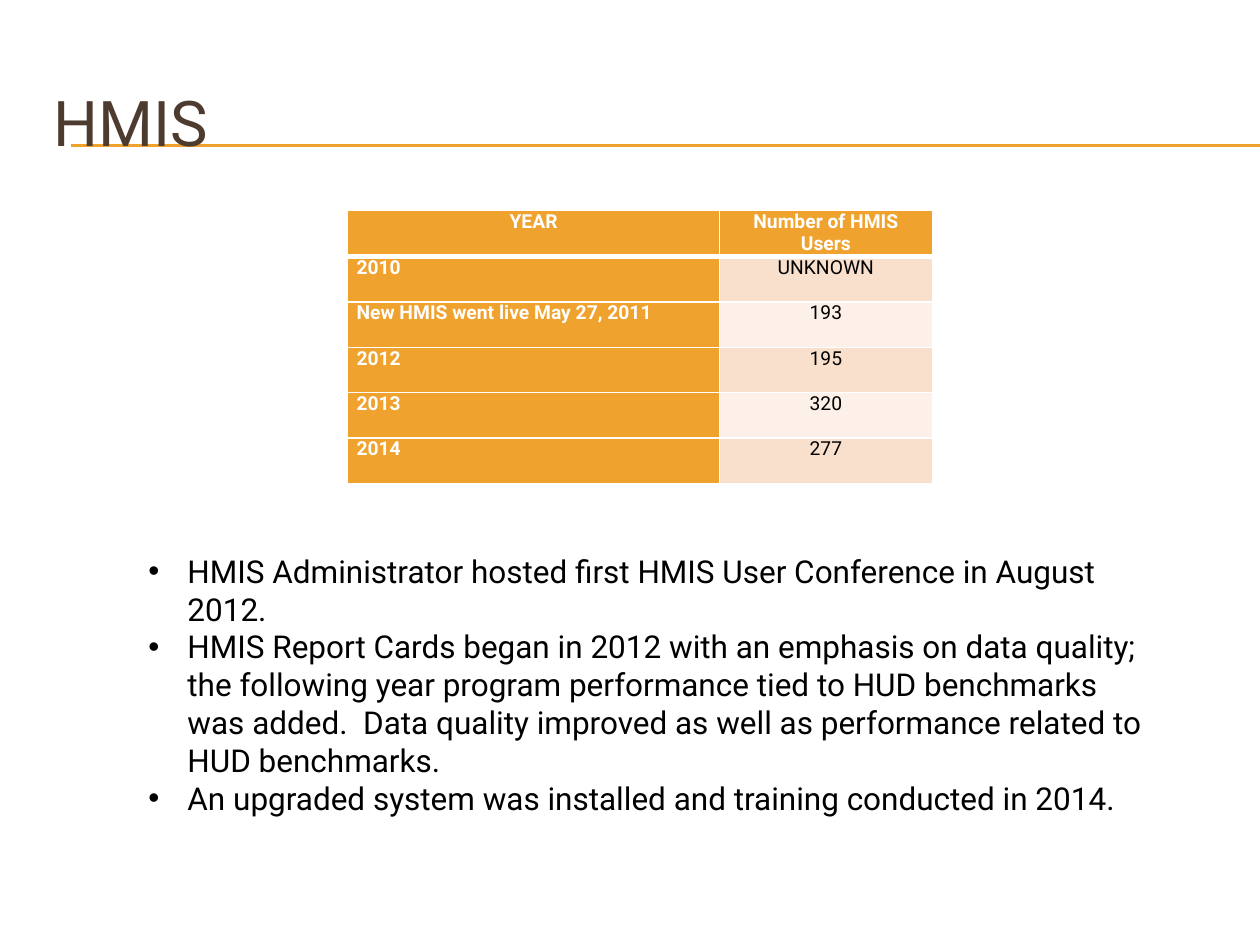
from lxml import etree
from pptx import Presentation
from pptx import util as u
from pptx.dml.color import RGBColor
from pptx.enum import shapes, text
from pptx.oxml.ns import qn

COLORS = {"brown": "4E3B30", "orange": "F0A22E", "peach": "F9E0CD",
          "cream": "FCF0E8", "white": "FFFFFF", "black": "000000"}
FONT = "Roboto"
COLS, ROWS = 10, 7.5  # grid of the slide, one inch to a cell

HEADER = ["YEAR", "Number of HMIS Users"]
USERS = [("2010", "UNKNOWN"), ("New HMIS went live May 27, 2011", "193"),
         ("2012", "195"), ("2013", "320"), ("2014", "277")]
NOTES = [
    "HMIS Administrator hosted first HMIS User Conference in August 2012.",
    "HMIS Report Cards began in 2012 with an emphasis on data quality; "
    "the following year program performance tied to HUD benchmarks was added.  "
    "Data quality improved as well as performance related to HUD benchmarks.",
    "An upgraded system was installed and training conducted in 2014.",
]


def rgb(name):
    return RGBColor.from_string(COLORS[name])


def write(p, content, size=18, color="black", bold=False, align=None):
    r = p.add_run()
    r.text = content
    r.font.name, r.font.size, r.font.bold = FONT, u.Pt(size), bold
    r.font.color.rgb = rgb(color)
    p.alignment = align


def bullet(p, indent):
    pPr = p._p.get_or_add_pPr()
    pPr.set("marL", str(u.Inches(indent)))
    pPr.set("indent", str(-u.Inches(indent)))
    etree.SubElement(pPr, qn("a:buFont"), typeface="Arial")
    etree.SubElement(pPr, qn("a:buChar"), char="•")


def border(cell, side, width, color="white"):
    ln = etree.SubElement(cell._tc.get_or_add_tcPr(), qn("a:ln" + side),
                          w=str(u.Pt(width)))
    fill = etree.SubElement(ln, qn("a:solidFill"))
    etree.SubElement(fill, qn("a:srgbClr"), val=COLORS[color])


class Deck:
    def __init__(self):
        self.prs = Presentation()
        self.prs.slide_width, self.prs.slide_height = u.Inches(COLS), u.Inches(ROWS)
        self.s = self.prs.slides.add_slide(self.prs.slide_layouts[6])

    def grid(self, col, row):
        return (int(self.prs.slide_width * col / COLS),
                int(self.prs.slide_height * row / ROWS))

    def rule(self, start, end, row):
        sp = self.s.shapes.add_connector(shapes.MSO_CONNECTOR.STRAIGHT,
                                         *self.grid(start, row), *self.grid(end, row))
        sp.line.color.rgb, sp.line.width = rgb("orange"), u.Pt(0.75)
        etree.SubElement(sp._element.spPr, qn("a:effectLst"))

    def textbox(self, col, row, width, height, anchor=text.MSO_ANCHOR.TOP):
        sp = self.s.shapes.add_textbox(*self.grid(col, row), *self.grid(width, height))
        tf = sp.text_frame
        tf.word_wrap, tf.vertical_anchor = True, anchor
        return tf

    def title(self, content, *box):
        tf = self.textbox(*box, anchor=text.MSO_ANCHOR.MIDDLE)
        write(tf.paragraphs[0], content, size=36, color="brown")

    def bullets(self, items, *box):
        tf = self.textbox(*box)
        for i, item in enumerate(items):
            p = tf.add_paragraph() if i else tf.paragraphs[0]
            bullet(p, 0.31)
            write(p, item)

    def table(self, rows, col, row, widths, row_height):
        size = self.grid(sum(widths), row_height * len(rows))
        tbl = self.s.shapes.add_table(len(rows), len(widths),
                                      *self.grid(col, row), *size).table
        for c, width in zip(tbl.columns, widths):
            c.width = u.Inches(width)
        for i, values in enumerate(rows):
            for j, value in enumerate(values):
                self.cell(tbl.cell(i, j), value, i, j)

    def cell(self, cell, value, i, j):
        heading = i == 0 or j == 0
        cell.margin_left = cell.margin_right = u.Inches(0.07)
        cell.margin_top = cell.margin_bottom = 0
        # The heavy rule under the header is shared by the row below it
        for side, heavy in (("L", False), ("R", False), ("T", i == 1), ("B", i == 0)):
            border(cell, side, 3 if heavy else 1)
        cell.fill.solid()
        band = "peach" if i % 2 else "cream"
        cell.fill.fore_color.rgb = rgb("orange" if heading else band)
        left = j == 0 and i > 0
        write(cell.text_frame.paragraphs[0], value, size=11, bold=heading,
              color="white" if heading else "black",
              align=text.PP_ALIGN.LEFT if left else text.PP_ALIGN.CENTER)


def main():
    deck = Deck()
    # Title over its double rule
    for row in (1.15, 1.16):
        deck.rule(0.56, COLS, row)
    deck.title("HMIS", 0.33, 0.5, 9.5, 0.92)
    # Users per year
    deck.table([HEADER, *USERS], 2.76, 1.67, (2.95, 1.69), 0.36)
    # Milestones
    deck.bullets(NOTES, 1.08, 4.33, 8.17, 1.92)
    deck.prs.save("out.pptx")


if __name__ == "__main__":
    main()
